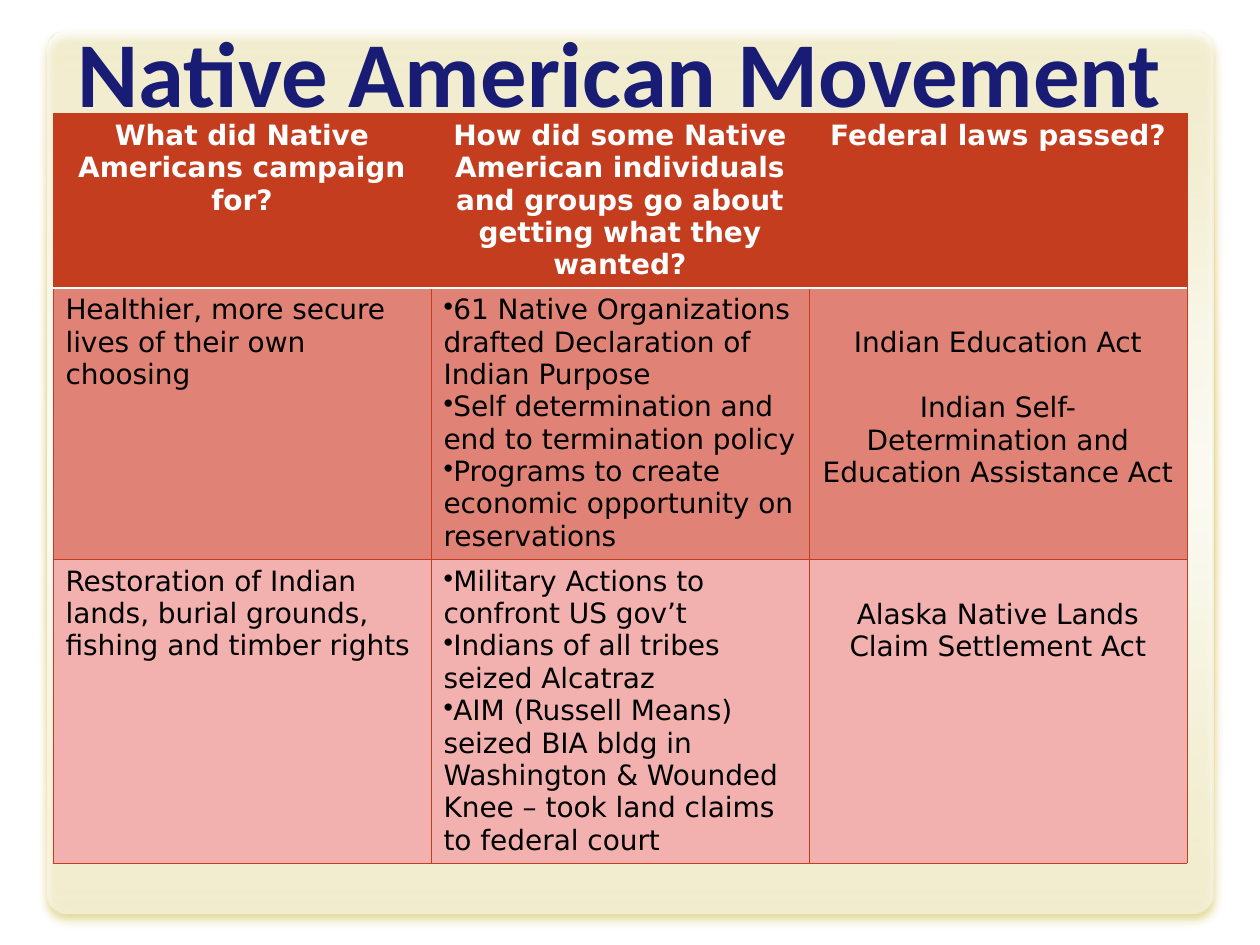
from dataclasses import dataclass

from lxml import etree
from pptx import Presentation
from pptx.dml.color import RGBColor
from pptx.enum import shapes, text
from pptx.oxml import parse_xml
from pptx.oxml.ns import nsdecls, qn
from pptx.util import Inches, Pt

COLORS = {
    "title": "181C74",
    "accent": "C43D1F",
    "row_dark": "E08275",
    "row_light": "F2B0AF",
    "white": "FFFFFF",
    "black": "000000",
    "shadow": "C5AF25",
}
BODY_FONT = "DejaVu Sans"
# Position and opacity of each white stop, in percent
PANEL_STOPS = [(0, 50), (35, 87), (50, 92), (60, 89), (100, 55)]


@dataclass
class Entry:
    lines: list[str]
    centered: bool = False
    bulleted: bool = False
    top: float = 0.05
    gap: float = 0


@dataclass
class Row:
    height: float
    fill: str
    ink: str
    entries: list[Entry]
    bold: bool = False
    top_line: tuple[str, float] = ("accent", 0.39)
    bottom_line: tuple[str, float] = ("accent", 0.39)


LINE = 0.26  # height of one line of body text
HEADER_RULE = ("white", 1)
ROWS = [
    Row(1.38, "accent", "white", [
        Entry(["What did Native Americans campaign for?"], centered=True),
        Entry(["How did some Native American individuals and groups go about "
               "getting what they wanted?"], centered=True),
        Entry(["Federal laws passed?"], centered=True),
    ], bold=True, bottom_line=HEADER_RULE),
    Row(2.15, "row_dark", "black", [
        Entry(["Healthier, more secure lives of their own choosing"]),
        Entry(["61 Native Organizations drafted Declaration of Indian Purpose",
               "Self determination and end to termination policy",
               "Programs to create economic opportunity on reservations"], bulleted=True),
        Entry(["Indian Education Act",
               "Indian Self-Determination and Education Assistance Act"],
              centered=True, top=0.05 + LINE, gap=LINE),
    ], top_line=HEADER_RULE),
    Row(2.41, "row_light", "black", [
        Entry(["Restoration of Indian lands, burial grounds, fishing and timber rights"]),
        Entry(["Military Actions to confront US gov’t",
               "Indians of all tribes seized Alcatraz",
               "AIM (Russell Means) seized BIA bldg in Washington & Wounded Knee "
               "– took land claims to federal court"], bulleted=True),
        Entry(["Alaska Native Lands Claim Settlement Act"], centered=True, top=0.05 + LINE),
    ]),
]


def rgb(name: str) -> RGBColor:
    return RGBColor.from_string(COLORS[name])


def add_span(para, words: str, font: str, size: float, color: str, bold: bool) -> None:
    span = para.add_run()
    span.text = words
    span.font.name = font
    span.font.size = Pt(size)
    span.font.bold = bold
    span.font.color.rgb = rgb(color)


def add_panel(page) -> None:
    """Draw the translucent rounded panel behind everything else."""
    panel = page.shapes.add_shape(shapes.MSO_SHAPE.ROUNDED_RECTANGLE, Inches(0.38),
                                  Inches(0.25), Inches(9.25), Inches(7))
    panel.adjustments[0] = 0.022
    panel.line.fill.background()
    stops = "".join(
        f'<a:gs pos="{place * 1000}"><a:srgbClr val="{COLORS["white"]}">'
        f'<a:alpha val="{opacity * 1000}"/></a:srgbClr></a:gs>'
        for place, opacity in PANEL_STOPS)
    gradient = parse_xml(f'<a:gradFill {nsdecls("a")}><a:gsLst>{stops}</a:gsLst>'
                         '<a:lin ang="5400000" scaled="0"/></a:gradFill>')
    properties = panel._element.spPr
    properties.find(qn("a:prstGeom")).addnext(gradient)
    properties.append(parse_xml(
        f'<a:effectLst {nsdecls("a")}><a:outerShdw blurRad="{Pt(5)}" dist="{Pt(3.6)}" '
        f'dir="5400000" rotWithShape="0"><a:srgbClr val="{COLORS["shadow"]}">'
        '<a:alpha val="90000"/></a:srgbClr></a:outerShdw></a:effectLst>'))
    page.shapes._spTree.insert(2, panel._element)


def add_title(page) -> None:
    box = page.shapes.title
    box.left, box.top, box.width, box.height = Inches(0.42), 0, Inches(9), Inches(1)
    frame = box.text_frame
    frame.auto_size = text.MSO_AUTO_SIZE.NONE
    frame.vertical_anchor = text.MSO_ANCHOR.BOTTOM
    frame.margin_bottom = 0
    para = frame.paragraphs[0]
    para.alignment = text.PP_ALIGN.CENTER
    add_span(para, "Native American Movement", "Calibri", 53, "title", True)


def set_borders(cell, lines: dict[str, tuple[str, float]]) -> None:
    properties = cell._tc.get_or_add_tcPr()
    for index, (side, (color, width)) in enumerate(lines.items()):
        properties.insert(index, parse_xml(
            f'<a:ln{side} {nsdecls("a")} w="{Pt(width)}"><a:solidFill>'
            f'<a:srgbClr val="{COLORS[color]}"/></a:solidFill></a:ln{side}>'))


def add_bullet(para) -> None:
    properties = para._p.get_or_add_pPr()
    properties.set("marL", "0")
    properties.set("indent", "0")
    etree.SubElement(properties, qn("a:buChar")).set("char", "•")


def fill_cell(cell, row: Row, entry: Entry) -> None:
    cell.fill.solid()
    cell.fill.fore_color.rgb = rgb(row.fill)
    side_line = ("accent", 0.39)
    set_borders(cell, {"L": side_line, "R": side_line,
                       "T": row.top_line, "B": row.bottom_line})
    cell.margin_top = Inches(entry.top)
    frame = cell.text_frame
    for index, line in enumerate(entry.lines):
        para = frame.add_paragraph() if index else frame.paragraphs[0]
        para.alignment = text.PP_ALIGN.CENTER if entry.centered else text.PP_ALIGN.LEFT
        if index and entry.gap:
            para.space_before = Inches(entry.gap)
        if entry.bulleted:
            add_bullet(para)
        add_span(para, line, BODY_FONT, 16, row.ink, row.bold)


def add_movement_table(page) -> None:
    height = sum(row.height for row in ROWS)
    table = page.shapes.add_table(len(ROWS), 3, Inches(0.42), Inches(0.9),
                                  Inches(9), Inches(height)).table
    table.horz_banding = False
    for row_index, row in enumerate(ROWS):
        table.rows[row_index].height = Inches(row.height)
        for column_index, entry in enumerate(row.entries):
            fill_cell(table.cell(row_index, column_index), row, entry)


def main() -> None:
    deck = Presentation()
    deck.slide_width, deck.slide_height = Inches(10), Inches(7.5)
    page = deck.slides.add_slide(deck.slide_layouts[5])
    add_panel(page)
    add_title(page)
    add_movement_table(page)
    deck.save("out.pptx")


if __name__ == "__main__":
    main()
